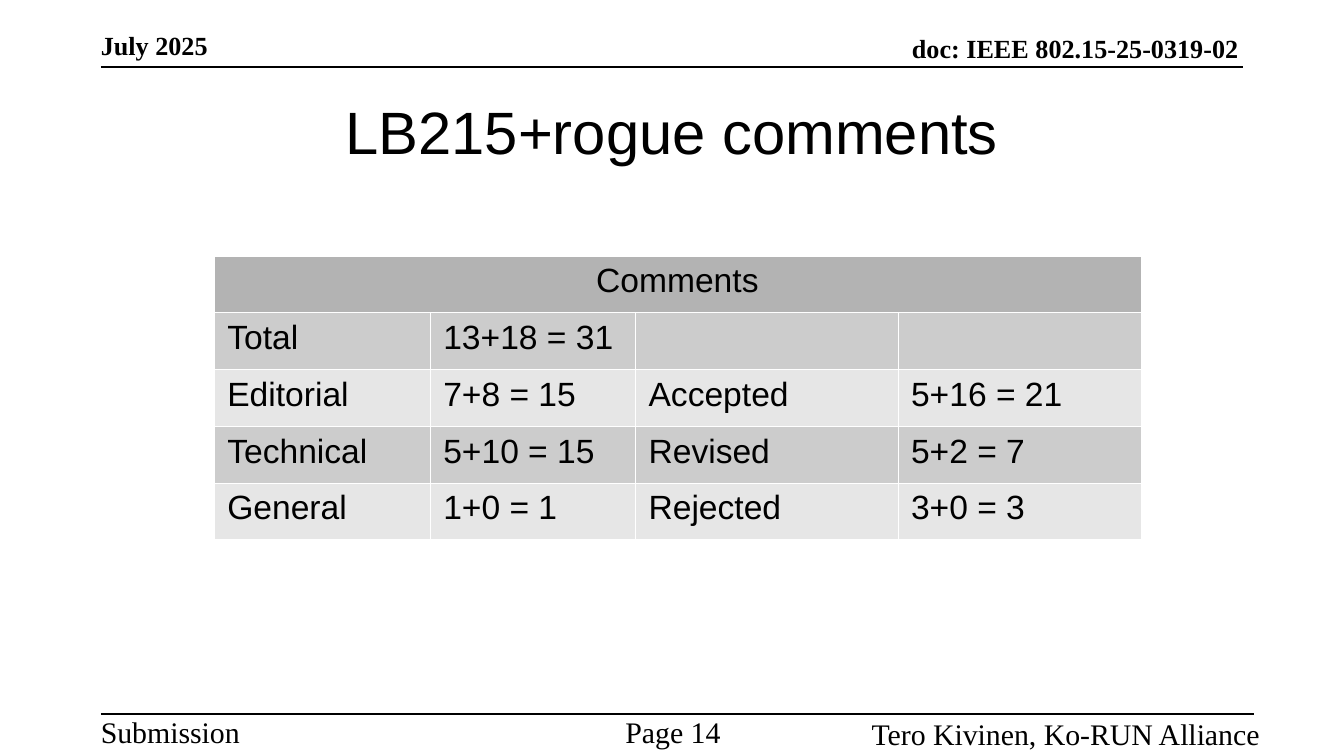
"""Build the comment summary slide with its running header and footer."""
from lxml.etree import SubElement
from pptx import Presentation
from pptx.dml.color import RGBColor
from pptx.enum.shapes import MSO_CONNECTOR as Connector
from pptx.enum.text import MSO_ANCHOR as Anchor, MSO_AUTO_SIZE as AutoSize, PP_ALIGN as Align
from pptx.oxml.ns import qn
from pptx.util import Pt

BLACK = RGBColor(0x00, 0x00, 0x00)
HEADING_GREY = RGBColor(0xB3, 0xB3, 0xB3)
DARK_BAND = RGBColor(0xCC, 0xCC, 0xCC)
LIGHT_BAND = RGBColor(0xE6, 0xE6, 0xE6)
BORDER = RGBColor(0xFF, 0xFF, 0xFF)
SANS, SERIF = "Arial", "Times New Roman"

COUNTS = [
    ["Comments", "", "", ""],
    ["Total", "13+18 = 31", "", ""],
    ["Editorial", "7+8 = 15", "Accepted", "5+16 = 21"],
    ["Technical", "5+10 = 15", "Revised", "5+2 = 7"],
    ["General", "1+0 = 1", "Rejected", "3+0 = 3"],
]


def write(frame, text, size=18, font=SANS, bold=False, align=Align.LEFT):
    paragraph = frame.paragraphs[0]
    paragraph.alignment = align
    run = paragraph.add_run()
    run.text = text
    run.font.size = Pt(size)
    run.font.name = font
    run.font.bold = bold
    run.font.color.rgb = BLACK


class CommentSlide:
    def __init__(self, deck):
        self.slide = deck.slides.add_slide(deck.slide_layouts[5])

    def fit(self, frame, anchor):
        frame.margin_left = frame.margin_right = frame.margin_top = frame.margin_bottom = 0
        frame.word_wrap = True
        frame.auto_size = AutoSize.NONE
        frame.vertical_anchor = anchor

    def title(self, text, left, top, width, height):
        heading = self.slide.shapes.title
        heading.left, heading.top = Pt(left), Pt(top)
        heading.width, heading.height = Pt(width), Pt(height)
        self.fit(heading.text_frame, Anchor.MIDDLE)
        write(heading.text_frame, text, size=32, align=Align.CENTER)

    def label(self, text, left, top, width, height, anchor=Anchor.TOP, **style):
        box = self.slide.shapes.add_textbox(Pt(left), Pt(top), Pt(width), Pt(height))
        self.fit(box.text_frame, anchor)
        write(box.text_frame, text, font=SERIF, **style)

    def rule(self, left, right, y):
        line = self.slide.shapes.add_connector(
            Connector.STRAIGHT, Pt(left), Pt(y), Pt(right), Pt(y))
        line.line.color.rgb = BLACK
        line.line.width = Pt(1)
        SubElement(line._element.spPr, qn("a:effectLst"))

    def border(self, cell):
        properties = cell._tc.get_or_add_tcPr()
        for side in ("a:lnL", "a:lnR", "a:lnT", "a:lnB"):
            edge = SubElement(properties, qn(side), w=str(Pt(0.06)))
            fill = SubElement(edge, qn("a:solidFill"))
            SubElement(fill, qn("a:srgbClr"), val=str(BORDER))

    def table(self, rows, left, top, widths, row_height):
        grid = self.slide.shapes.add_table(
            len(rows), len(widths), Pt(left), Pt(top),
            Pt(sum(widths)), Pt(row_height * len(rows))).table
        grid.first_row = grid.horz_banding = False
        for column, width in zip(grid.columns, widths):
            column.width = Pt(width)
        for r, row in enumerate(rows):
            grid.rows[r].height = Pt(row_height)
            band = HEADING_GREY if r == 0 else DARK_BAND if r % 2 else LIGHT_BAND
            for c, text in enumerate(row):
                cell = grid.cell(r, c)
                cell.margin_left = cell.margin_right = Pt(7.2)
                cell.margin_top = cell.margin_bottom = Pt(3.6)
                self.border(cell)
                cell.fill.solid()
                cell.fill.fore_color.rgb = band
                if text:
                    write(cell.text_frame, text, align=Align.LEFT if r else Align.CENTER)
        grid.cell(0, 0).merge(grid.cell(0, len(widths) - 1))


def main():
    deck = Presentation()
    deck.slide_width, deck.slide_height = Pt(720), Pt(405)
    page = CommentSlide(deck)
    page.label("doc: IEEE 802.15-25-0319-02", 244, 23, 419.6, 11,
               anchor=Anchor.BOTTOM, size=14, bold=True, align=Align.RIGHT)
    page.rule(54, 666, 36)
    page.label("Submission", 54, 382.5, 135, 16.5, size=16)
    page.rule(54, 672, 382.5)
    page.label("Page 14", 293, 382.5, 135, 16.5, size=16, align=Align.CENTER)
    page.label("Tero Kivinen, Ko-RUN Alliance", 411, 383.3, 264, 16.5,
               size=16, align=Align.RIGHT)
    page.label("July 2025", 54, 21.5, 201, 11, anchor=Anchor.BOTTOM, size=14, bold=True)
    page.title("LB215+rogue comments", 36, 36, 648, 68)
    page.table(COUNTS, 114.6, 137, [115.7, 110, 140.6, 130.3], 30.4)
    deck.save("out.pptx")


if __name__ == "__main__":
    main()
